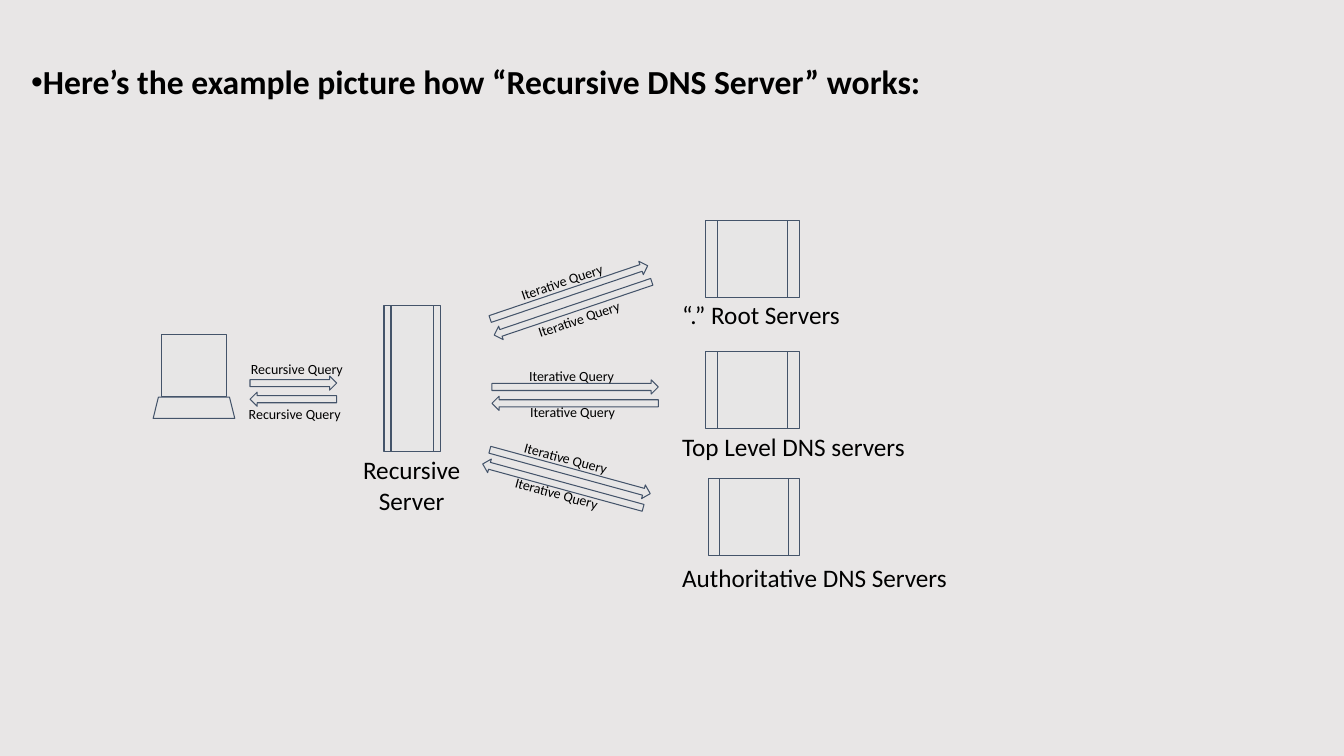
import pptx
import pptx.util
import pptx.dml.color
import pptx.enum.shapes
import pptx.enum.text
import pptx.oxml.ns
import lxml.etree

Pt = pptx.util.Pt
SHAPE = pptx.enum.shapes.MSO_SHAPE
ALIGN = pptx.enum.text.PP_ALIGN
FIT = pptx.enum.text.MSO_AUTO_SIZE

BLACK = pptx.dml.color.RGBColor(0x00, 0x00, 0x00)
BACKDROP = pptx.dml.color.RGBColor(0xE8, 0xE6, 0xE6)
DEVICE_FILL = pptx.dml.color.RGBColor(0xE7, 0xE6, 0xE6)
OUTLINE = pptx.dml.color.RGBColor(0x44, 0x54, 0x6A)


class Diagram:
    font = "Calibri"
    arrow_height = 10.1

    def __init__(self, slide):
        self.s = slide
        fill = slide.background.fill
        fill.solid()
        fill.fore_color.rgb = BACKDROP

    def format_text(self, tf, size, bold=False, align=None):
        for p in tf.paragraphs:
            p.alignment = align
            for r in p.runs:
                r.font.name = self.font
                r.font.size = Pt(size)
                r.font.bold = bold
                r.font.color.rgb = BLACK

    def title(self, text, x, y, w, h):
        sp = self.s.shapes.title
        sp.left, sp.top, sp.width, sp.height = Pt(x), Pt(y), Pt(w), Pt(h)
        tf = sp.text_frame
        tf.text = text
        tf.word_wrap = True
        tf.auto_size = FIT.NONE
        tf.vertical_anchor = pptx.enum.text.MSO_ANCHOR.TOP
        self.format_text(tf, 24, bold=True, align=ALIGN.LEFT)
        p = tf.paragraphs[0]
        p.line_spacing = 0.9
        p.space_before = Pt(0)
        pPr = p._p.get_or_add_pPr()
        pPr.set("marL", "0")
        pPr.set("indent", str(-Pt(12)))
        font = lxml.etree.SubElement(pPr, pptx.oxml.ns.qn("a:buFont"))
        font.set("typeface", "Arial")
        bullet = lxml.etree.SubElement(pPr, pptx.oxml.ns.qn("a:buChar"))
        bullet.set("char", "•")

    def shape(self, kind, x, y, w, h, rotation=0, parent=None):
        shapes = (parent or self.s).shapes
        sp = shapes.add_shape(kind, Pt(x), Pt(y), Pt(w), Pt(h))
        sp.rotation = rotation
        sp.shadow.inherit = False
        sp.fill.solid()
        sp.fill.fore_color.rgb = DEVICE_FILL
        sp.line.color.rgb = OUTLINE
        sp.line.width = Pt(0.75)
        return sp

    def server(self, x, y, w, h):
        self.shape(SHAPE.FLOWCHART_PREDEFINED_PROCESS, x, y, w, h)

    def arrow(self, x, y, w, rotation=0):
        self.shape(SHAPE.RIGHT_ARROW, x, y, w, self.arrow_height, rotation)

    def laptop(self):
        group = self.s.shapes.add_group_shape()
        self.shape(SHAPE.RECTANGLE, 115.2, 239, 46.8, 44.6, parent=group)
        self.shape(SHAPE.TRAPEZOID, 109.4, 283.7, 58.3, 15.1, parent=group)

    def label(self, text, x, y, w, h, size=18, rotation=0, align=None,
              inset=3.6, fit=FIT.SHAPE_TO_FIT_TEXT):
        tb = self.s.shapes.add_textbox(Pt(x), Pt(y), Pt(w), Pt(h))
        tb.rotation = rotation
        tf = tb.text_frame
        tf.text = text
        tf.word_wrap = True
        tf.auto_size = fit
        tf.margin_left = tf.margin_right = Pt(7.2)
        tf.margin_top = tf.margin_bottom = Pt(inset)
        self.format_text(tf, size, align=align)

    def query(self, text, length, angle, arrows, labels):
        """Draw a request arrow and its reply arrow, each with a label."""
        for turn, (x, y) in zip((0, 180), arrows):
            self.arrow(x, y, length, (angle + turn) % 360)
        for x, y in labels:
            self.label(text, x, y, 85.3, 19.4, size=10, rotation=angle)


# top of the server, its left edge, its width, label, label top, label width
NAME_SERVERS = [
    (157.7, 504, 67, "“.” Root Servers", 210.2, 194.4),
    (251.3, 504, 67, "Top Level DNS servers", 304.6, 290.2),
    (342, 506.2, 64.8, "Authoritative DNS Servers", 398.2, 238.3),
]

# text, arrow length, angle, (request, reply) arrows, their labels
QUERIES = [
    ("Recursive Query", 61.9, 0,
     [(178.6, 268.6), (178.6, 280.1)], [(172.1, 254.2), (170.6, 285.8)]),
    ("Iterative Query", 118.8, 341.3,
     [(347, 203.8), (349.9, 215.3)], [(363.6, 190.1), (375.8, 216.7)]),
    ("Iterative Query", 118.8, 0,
     [(351.4, 271.4), (351.4, 283)], [(370.8, 259.2), (371.5, 284.4)]),
    ("Iterative Query", 118.8, 15.3,
     [(347.8, 331.9), (342.7, 342)], [(366.5, 319), (360, 344.2)]),
]


def main():
    prs = pptx.Presentation()
    prs.slide_width, prs.slide_height = Pt(960), Pt(540)
    d = Diagram(prs.slides.add_slide(prs.slide_layouts[5]))

    d.title("Here’s the example picture how “Recursive DNS Server” works:",
            15.1, 43.2, 785.5, 67)
    d.laptop()
    d.server(274.3, 218.2, 40.3, 104.4)
    d.label("Recursive Server", 231.8, 317.5, 124.6, 28.1,
            align=ALIGN.CENTER, inset=7.2, fit=FIT.NONE)
    for top, left, width, name, label_top, label_width in NAME_SERVERS:
        d.server(left, top, width, 54.7)
        d.label(name, 480.2, label_top, label_width, 28.8)
    for query in QUERIES:
        d.query(*query)

    prs.save("out.pptx")


if __name__ == "__main__":
    main()
